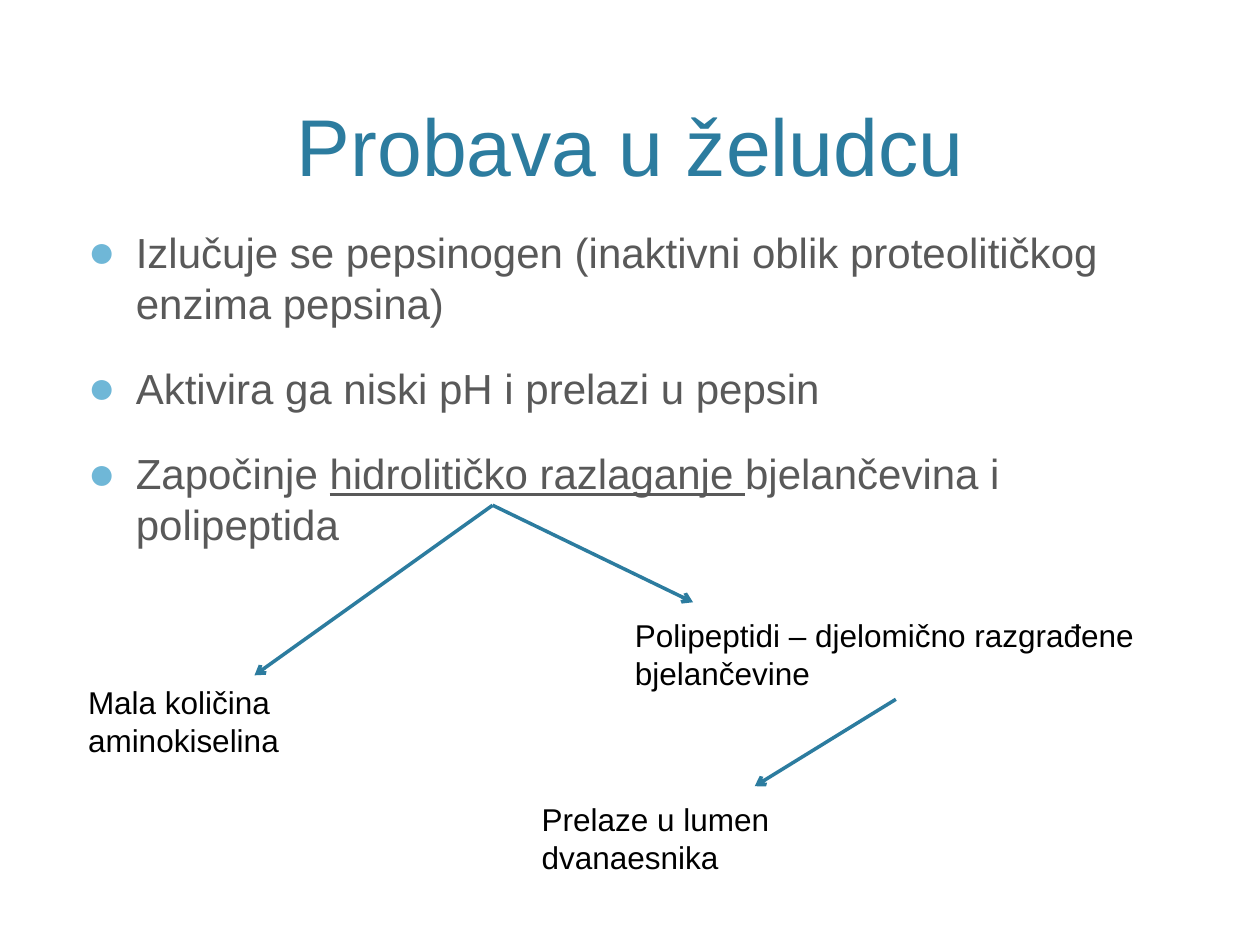
from dataclasses import dataclass

from lxml.etree import SubElement
from pptx import Presentation
from pptx.dml.color import RGBColor
from pptx.enum.shapes import MSO_CONNECTOR
from pptx.enum.text import MSO_ANCHOR, MSO_AUTO_SIZE, PP_ALIGN
from pptx.oxml.ns import qn
from pptx.util import Inches, Pt


@dataclass(frozen=True)
class Theme:
    font: str = "Arial"
    accent: str = "2C7C9F"
    bullet: str = "6FB7D7"
    body: str = "595959"
    label: str = "000000"
    title_size: int = 46
    body_size: int = 24
    label_size: int = 18
    line_width: int = 2


THEME = Theme()

# Each bullet is a list of (text, underlined) spans.
BULLETS = [
    [("Izlučuje se pepsinogen (inaktivni oblik proteolitičkog enzima pepsina)", False)],
    [("Aktivira ga niski pH i prelazi u pepsin", False)],
    [("Započinje ", False), ("hidrolitičko razlaganje ", True),
     ("bjelančevina i polipeptida", False)],
]
LABELS = [
    ("Mala količina aminokiselina", (0.6, 5.37, 2.79, 0.71)),
    ("Polipeptidi – djelomično razgrađene bjelančevine", (4.94, 4.84, 4.35, 0.71)),
    ("Prelaze u lumen dvanaesnika", (4.2, 6.3, 2.79, 0.71)),
]
BREAKDOWN = (3.91, 4.01)
ARROWS = [
    (BREAKDOWN, (2.02, 5.36)),
    (BREAKDOWN, (5.5, 4.78)),
    ((7.11, 5.55), (5.99, 6.24)),
]


def style(para, size, color):
    para.font.name = THEME.font
    para.font.size = Pt(size)
    para.font.color.rgb = RGBColor.from_string(color)


def place_title(page, text, box):
    title = page.shapes.title
    title.left, title.top, title.width, title.height = map(Inches, box)
    frame = title.text_frame
    frame.text = text
    frame.vertical_anchor = MSO_ANCHOR.BOTTOM
    frame.auto_size = MSO_AUTO_SIZE.NONE
    para = frame.paragraphs[0]
    para.alignment = PP_ALIGN.CENTER
    style(para, THEME.title_size, THEME.accent)


def add_text_frame(page, box):
    frame = page.shapes.add_textbox(*map(Inches, box)).text_frame
    frame.word_wrap = True
    return frame


def set_bullet(para, indent):
    props = para._p.get_or_add_pPr()
    props.set("marL", str(Inches(indent)))
    props.set("indent", str(-Inches(indent)))
    color = SubElement(props, qn("a:buClr"))
    SubElement(color, qn("a:srgbClr"), val=THEME.bullet)
    SubElement(props, qn("a:buSzPct"), val="110000")
    SubElement(props, qn("a:buFont"), typeface=THEME.font)
    SubElement(props, qn("a:buChar"), char="●")


def add_bullets(page, bullets, box):
    frame = add_text_frame(page, box)
    for index, spans in enumerate(bullets):
        para = frame.add_paragraph() if index else frame.paragraphs[0]
        para.space_before = Pt(20)
        set_bullet(para, 0.38)
        style(para, THEME.body_size, THEME.body)
        for text, underlined in spans:
            span = para.add_run()
            span.text = text
            if underlined:
                span.font.underline = True


def add_label(page, text, box):
    frame = add_text_frame(page, box)
    frame.auto_size = MSO_AUTO_SIZE.SHAPE_TO_FIT_TEXT
    frame.text = text
    style(frame.paragraphs[0], THEME.label_size, THEME.label)


def add_arrow(page, start, end):
    arrow = page.shapes.add_connector(
        MSO_CONNECTOR.STRAIGHT, *map(Inches, start + end))
    arrow.line.width = Pt(THEME.line_width)
    arrow.line.color.rgb = RGBColor.from_string(THEME.accent)
    SubElement(arrow.line._get_or_add_ln(), qn("a:tailEnd"), type="arrow")
    SubElement(arrow._element.spPr, qn("a:effectLst"))


def build_digestion_slide(deck):
    page = deck.slides.add_slide(deck.slide_layouts[5])
    place_title(page, "Probava u želudcu", (0.6, 0.12, 8.8, 1.46))
    add_bullets(page, BULLETS, (0.6, 1.75, 8.8, 4.75))
    for start, end in ARROWS:
        add_arrow(page, start, end)
    for text, box in LABELS:
        add_label(page, text, box)


def main():
    deck = Presentation()
    deck.slide_width, deck.slide_height = Inches(10), Inches(7.5)
    build_digestion_slide(deck)
    deck.save("out.pptx")


if __name__ == "__main__":
    main()
